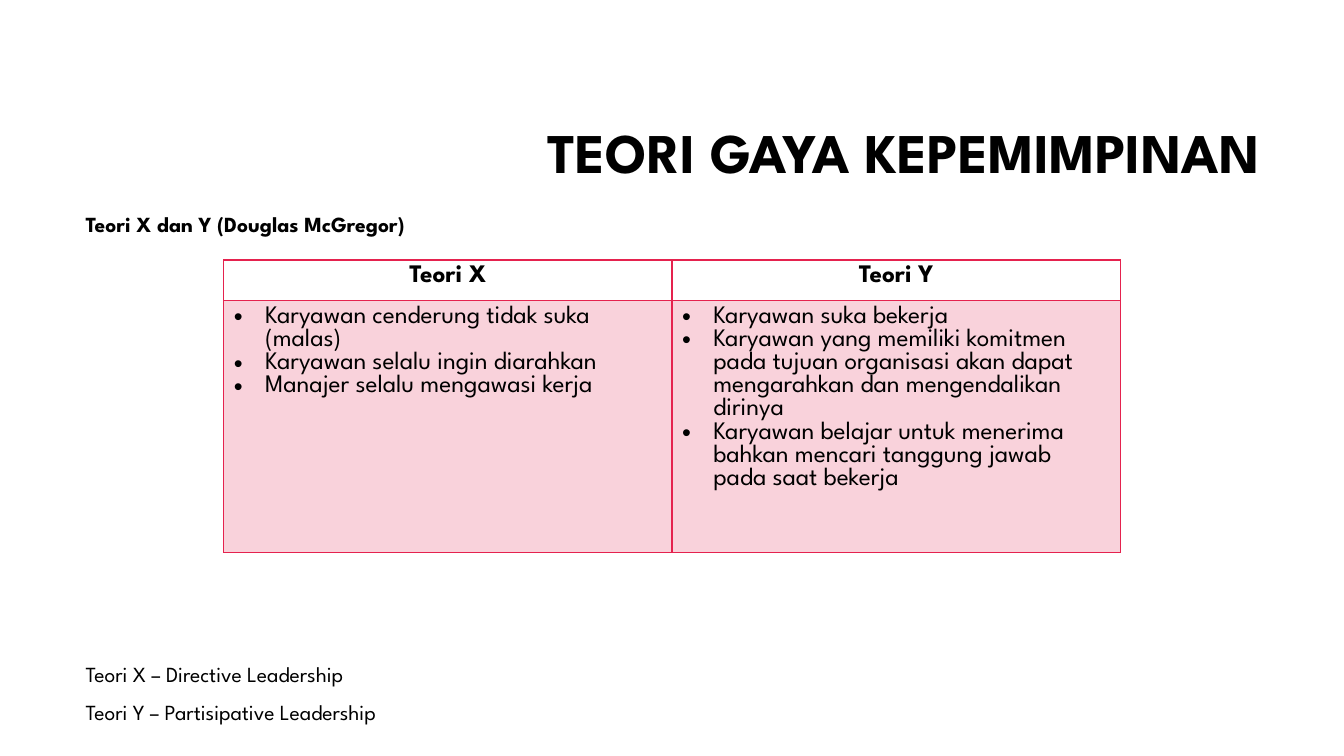
from dataclasses import dataclass

import lxml.etree
import pptx
import pptx.dml.color
import pptx.enum.text
import pptx.oxml.ns
import pptx.slide
import pptx.table
import pptx.text.text
import pptx.util

Inches = pptx.util.Inches
RGBColor = pptx.dml.color.RGBColor
Align = pptx.enum.text.PP_ALIGN
Anchor = pptx.enum.text.MSO_ANCHOR
qn = pptx.oxml.ns.qn

BLACK = RGBColor(0x00, 0x00, 0x00)
CRIMSON = RGBColor(0xE5, 0x22, 0x4E)
FONT = "League Spartan"


@dataclass(frozen=True)
class TextBlock:
    left: float
    top: float
    width: float
    height: float
    lines: list[str]
    size: float
    bold: bool = False
    align: Align = Align.LEFT
    anchor: Anchor = Anchor.TOP


@dataclass(frozen=True)
class Theory:
    heading: str
    claims: list[str]


TEXT_BLOCKS = [
    TextBlock(3.17, 0.84, 9.42, 1.41, ["TEORI GAYA KEPEMIMPINAN"], 40, True,
              Align.RIGHT, Anchor.MIDDLE),
    TextBlock(0.75, 2.07, 11.83, 0.4, ["Teori X dan Y (Douglas McGregor)"], 15.4, True),
    TextBlock(0.75, 6.54, 11.83, 0.7,
              ["Teori X – Directive Leadership", "Teori Y – Partisipative Leadership"], 15.4),
]

THEORIES = [
    Theory("Teori X", [
        "Karyawan cenderung tidak suka (malas)",
        "Karyawan selalu ingin diarahkan",
        "Manajer selalu mengawasi kerja",
    ]),
    Theory("Teori Y", [
        "Karyawan suka bekerja",
        "Karyawan yang memiliki komitmen pada tujuan organisasi akan dapat "
        "mengarahkan dan mengendalikan dirinya",
        "Karyawan belajar untuk menerima bahkan mencari tanggung jawab pada saat bekerja",
    ]),
]


def write_text(frame: pptx.text.text.TextFrame, lines: list[str], *, size: float,
               bold: bool = False, align: Align = Align.LEFT, line_spacing: float = 1.0,
               space_before: float = 0, bulleted: bool = False) -> None:
    frame.word_wrap = True
    for index, line in enumerate(lines):
        paragraph = frame.paragraphs[0] if index == 0 else frame.add_paragraph()
        paragraph.alignment = align
        paragraph.line_spacing = line_spacing
        paragraph.space_before = pptx.util.Pt(space_before if index else 0)
        if bulleted:
            properties = paragraph._p.get_or_add_pPr()
            properties.set("marL", str(Inches(0.31)))
            properties.set("indent", str(Inches(-0.31)))
            lxml.etree.SubElement(properties, qn("a:buFont"), typeface="Arial")
            lxml.etree.SubElement(properties, qn("a:buChar"), char="•")
        run = paragraph.add_run()
        run.text = line
        run.font.name = FONT
        run.font.size = pptx.util.Pt(size)
        run.font.bold = bold
        run.font.color.rgb = BLACK


def draw_text_block(slide: pptx.slide.Slide, block: TextBlock) -> None:
    box = slide.shapes.add_textbox(Inches(block.left), Inches(block.top),
                                   Inches(block.width), Inches(block.height))
    box.text_frame.vertical_anchor = block.anchor
    write_text(box.text_frame, block.lines, size=block.size, bold=block.bold,
               align=block.align, line_spacing=0.9, space_before=10)


def outline_cell(cell: pptx.table._Cell) -> None:
    properties = cell._tc.get_or_add_tcPr()
    for side in ("a:lnL", "a:lnR", "a:lnT", "a:lnB"):
        border = lxml.etree.SubElement(properties, qn(side), w=str(pptx.util.Pt(1)))
        fill = lxml.etree.SubElement(border, qn("a:solidFill"))
        lxml.etree.SubElement(fill, qn("a:srgbClr"), val=str(CRIMSON))


def tint_cell(cell: pptx.table._Cell) -> None:
    cell.fill.solid()
    cell.fill.fore_color.rgb = CRIMSON
    color = cell._tc.get_or_add_tcPr().find(qn("a:solidFill")).find(qn("a:srgbClr"))
    lxml.etree.SubElement(color, qn("a:alpha"), val="20000")


def draw_theory_table(slide: pptx.slide.Slide, theories: list[Theory]) -> None:
    table = slide.shapes.add_table(2, len(theories), Inches(2.22), Inches(2.58),
                                   Inches(8.89), Inches(2.35)).table
    table.first_row = False
    table.horz_banding = False
    table.rows[0].height = Inches(0.4)
    table.rows[1].height = Inches(1.95)
    for column, theory in enumerate(theories):
        heading, claims = table.cell(0, column), table.cell(1, column)
        outline_cell(heading)
        heading.fill.background()
        write_text(heading.text_frame, [theory.heading], size=18, bold=True,
                   align=Align.CENTER)
        outline_cell(claims)
        tint_cell(claims)
        write_text(claims.text_frame, theory.claims, size=18, bulleted=True)


def main() -> None:
    presentation = pptx.Presentation()
    presentation.slide_width = Inches(13.33)
    presentation.slide_height = Inches(7.5)
    slide = presentation.slides.add_slide(presentation.slide_layouts[6])
    for block in TEXT_BLOCKS:
        draw_text_block(slide, block)
    draw_theory_table(slide, THEORIES)
    presentation.save("out.pptx")


if __name__ == "__main__":
    main()
